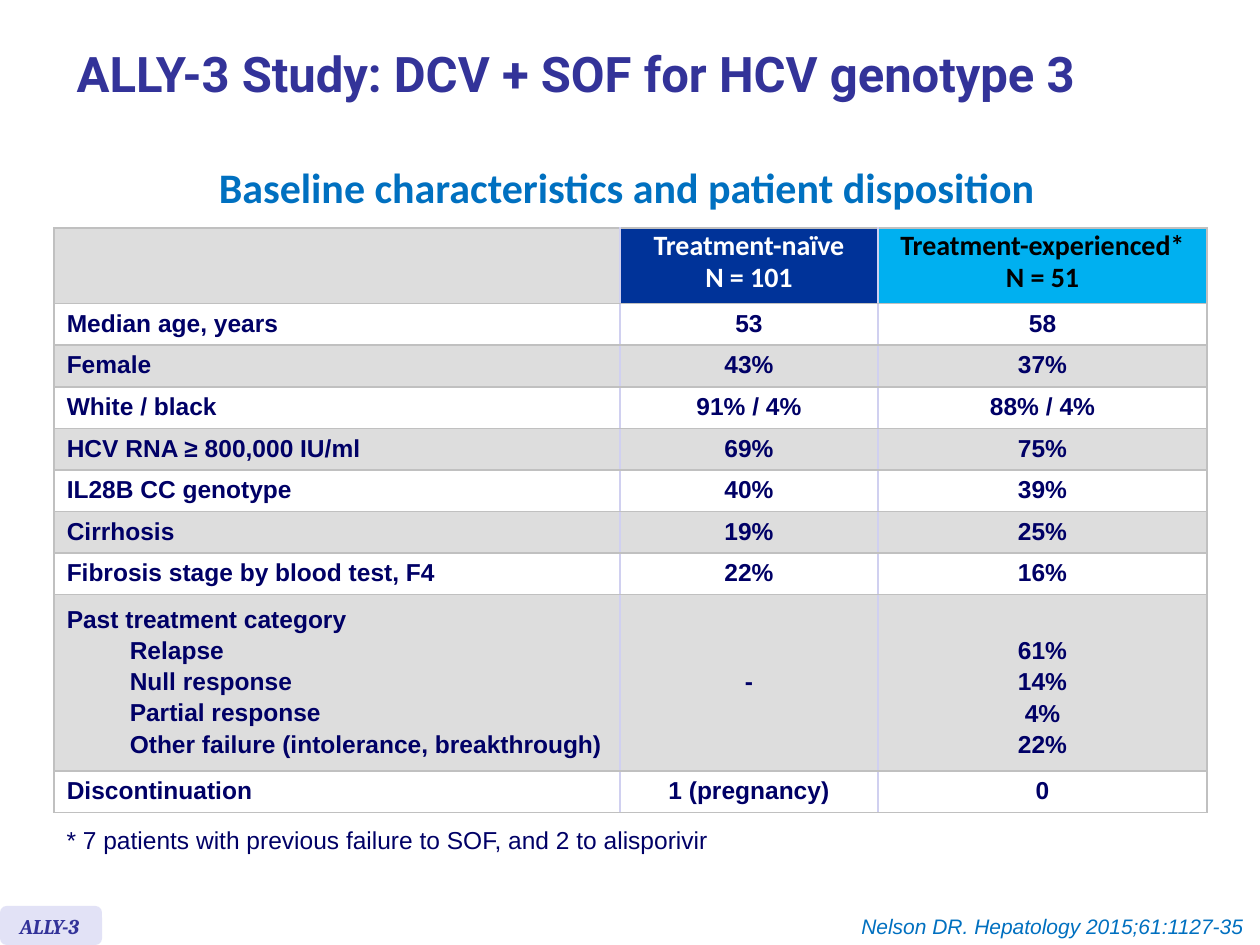
from pptx import Presentation
from pptx.dml.color import RGBColor
from pptx.enum.shapes import MSO_SHAPE
from pptx.enum.text import MSO_ANCHOR as ANCHOR, PP_ALIGN as ALIGN
from pptx.oxml import parse_xml
from pptx.oxml.ns import nsdecls
from pptx.util import Inches, Pt

NAVY, INDIGO, BLUE = "000066", "333399", "0070C0"
GREY, WHITE, RULE, LILAC = "DDDDDD", "FFFFFF", "C0C0C0", "D0D0F0"


def rgb(color):
    return RGBColor.from_string(color)


def write(tf, text, size=14, font="Arial", color=NAVY, bold=False, italic=False,
          align=ALIGN.LEFT, spacing=None, before=0, anchor=ANCHOR.TOP, wrap=True):
    """Write one paragraph per line; lines after a tab are indented."""
    tf.word_wrap = wrap
    tf.vertical_anchor = anchor
    for i, line in enumerate(text.split("\n")):
        p = tf.paragraphs[0] if i == 0 else tf.add_paragraph()
        p.alignment = align
        if line.startswith("\t"):
            p.level = 1
            p._p.get_or_add_pPr().set("marL", str(Inches(0.5)))
        if spacing:
            p.line_spacing = spacing
        if i:
            p.space_before = Pt(before)
        r = p.add_run()
        r.text = line.strip()
        f = r.font
        f.size, f.name, f.bold, f.italic = Pt(size), font, bold, italic
        f.color.rgb = rgb(color)


prs = Presentation()
prs.slide_width, prs.slide_height = Inches(10), Inches(7.5)
s = prs.slides.add_slide(prs.slide_layouts[6])

# Badge behind the study name
badge = s.shapes.add_shape(MSO_SHAPE.ROUNDED_RECTANGLE, Inches(0), Inches(7.19),
                           Inches(0.81), Inches(0.31))
badge.shadow.inherit = False
badge.fill.solid()
badge.fill.fore_color.rgb = rgb("E2E2F6")
badge.line.fill.background()

# Title, subtitle, footnote, badge label and citation
texts = [
    ((0.51, 0.08, 9.13, 1.07), "ALLY-3 Study: DCV + SOF for HCV genotype 3",
     dict(size=28, font="Roboto", color=INDIGO, bold=True, spacing=0.85,
          anchor=ANCHOR.MIDDLE)),
    ((1.06, 1.42, 7.83, 0.35), "Baseline characteristics and patient disposition",
     dict(size=24, font="Calibri", color=BLUE, bold=True, spacing=Pt(15.2),
          align=ALIGN.CENTER)),
    ((0.43, 6.5, 5.32, 0.34),
     "* 7 patients with previous failure to SOF, and 2 to alisporivir", dict(wrap=False)),
    ((0.06, 7.2, 0.88, 0.3), "ALLY-3",
     dict(size=12, font="Cambria", color=INDIGO, bold=True, italic=True)),
    ((6.04, 7.2, 3.93, 0.3), "Nelson DR. Hepatology 2015;61:1127-35",
     dict(size=12, color=BLUE, italic=True, align=ALIGN.RIGHT)),
]
for box, text, style in texts:
    write(s.shapes.add_textbox(*map(Inches, box)).text_frame, text, **style)

# Baseline table
rows = [
    ("", "Treatment-naïve\nN = 101", "Treatment-experienced*\nN = 51"),
    ("Median age, years", "53", "58"),
    ("Female", "43%", "37%"),
    ("White / black", "91% / 4%", "88% / 4%"),
    ("HCV RNA ≥ 800,000 IU/ml", "69%", "75%"),
    ("IL28B CC genotype", "40%", "39%"),
    ("Cirrhosis", "19%", "25%"),
    ("Fibrosis stage by blood test, F4", "22%", "16%"),
    ("Past treatment category\n\tRelapse\n\tNull response\n\tPartial response"
     "\n\tOther failure (intolerance, breakthrough)", "-", "61%\n14%\n4%\n22%"),
    ("Discontinuation", "1 (pregnancy)", "0"),
]
widths = [4.49, 2.05, 2.61]
heights = [0.6] + [0.33] * 7 + [1.4, 0.33]
header_fills = [GREY, "003399", "00B0F0"]
header_colors = [NAVY, WHITE, "000000"]
PAST = 8

table = s.shapes.add_table(len(rows), len(widths), Inches(0.43), Inches(1.81),
                           Inches(sum(widths)), Inches(sum(heights))).table
for column, width in zip(table.columns, widths):
    column.width = Inches(width)
for row, height in zip(table.rows, heights):
    row.height = Inches(height)

for i, row in enumerate(rows):
    for j, text in enumerate(row):
        cell = table.cell(i, j)
        # Lilac between columns, grey everywhere else
        sides = dict(L=LILAC if j else RULE, R=LILAC if j < 2 else RULE, T=RULE, B=RULE)
        tc_pr = cell._tc.get_or_add_tcPr()
        for side, color in sides.items():
            tc_pr.append(parse_xml(
                f'<a:ln{side} {nsdecls("a")} w="{Pt(1)}"><a:solidFill>'
                f'<a:srgbClr val="{color}"/></a:solidFill></a:ln{side}>'))
        cell.fill.solid()
        cell.fill.fore_color.rgb = rgb(header_fills[j] if i == 0 else
                                       WHITE if i % 2 else GREY)
        cell.vertical_anchor = ANCHOR.MIDDLE
        if i == PAST and j == 2:
            # Line the values up with the indented labels
            cell.vertical_anchor = ANCHOR.BOTTOM
            cell.margin_bottom = Inches(0.1)
        if text:
            style = (dict(size=16, font="Calibri", color=header_colors[j], before=3.2)
                     if i == 0 else dict(before=2.8))
            write(cell.text_frame, text, bold=True, spacing=Pt(15),
                  align=ALIGN.CENTER if j else ALIGN.LEFT,
                  anchor=None, **style)

prs.save("out.pptx")
